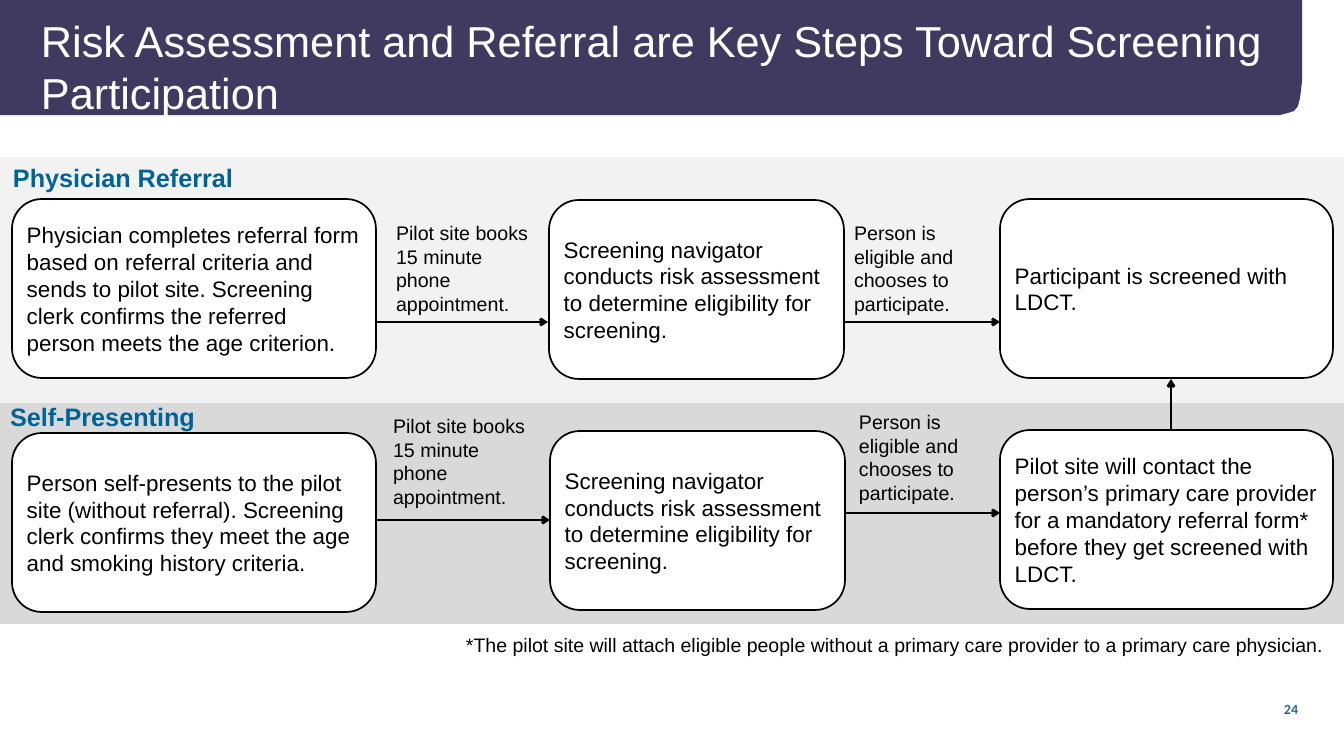
from lxml import etree
from pptx import Presentation, util as u
from pptx.dml.color import RGBColor
from pptx.enum import shapes, text
from pptx.oxml.ns import qn

PX = 14966  # EMU per px
PURPLE = RGBColor(0x40, 0x3A, 0x60)
BLUE = RGBColor(0x00, 0x62, 0x95)
PAGE_BLUE = RGBColor(0x32, 0x62, 0x95)
LIGHT_GREY = RGBColor(0xF2, 0xF2, 0xF2)
MID_GREY = RGBColor(0xD9, 0xD9, 0xD9)
WHITE = RGBColor(0xFF, 0xFF, 0xFF)
BLACK = RGBColor(0, 0, 0)

prs = Presentation()
prs.slide_width, prs.slide_height = 1344 * PX, 756 * PX
s = prs.slides.add_slide(prs.slide_layouts[6])


def add_text(content, x, y, w, h, size=23.1, color=BLACK, font="Arial", bold=False,
             wrap=True, inset=True, middle=False, boxed=False):
    """Add a text box, or a white rounded box with a black outline if boxed."""
    frame = [v * PX for v in (x, y, w, h)]
    if boxed:
        sp = s.shapes.add_shape(shapes.MSO_SHAPE.ROUNDED_RECTANGLE, *frame)
        sp.shadow.inherit = False
        sp.fill.solid()
        sp.fill.fore_color.rgb = WHITE
        sp.line.color.rgb = BLACK
        sp.line.width = u.Pt(2)
    else:
        sp = s.shapes.add_textbox(*frame)
    tf = sp.text_frame
    tf.word_wrap = wrap
    tf.vertical_anchor = text.MSO_ANCHOR.MIDDLE if middle or boxed else text.MSO_ANCHOR.TOP
    if not inset:
        tf.margin_left = tf.margin_top = tf.margin_right = tf.margin_bottom = 0
    p = tf.paragraphs[0]
    p.alignment = text.PP_ALIGN.LEFT
    r = p.add_run()
    r.text = content
    r.font.name, r.font.size, r.font.bold = font, u.Pt(size), bold
    r.font.color.rgb = color


# Title banner with a rounded lower right corner
builder = s.shapes.build_freeform(1302, 0, scale=PX)
builder.add_line_segments([(0, 0), (0, 115), (1268, 115), (1280, 115), (1288, 113), (1294, 111),
                           (1298, 106), (1300, 98), (1301, 91), (1302, 81)])
banner = builder.convert_to_shape()

# Background bands of the two pathways
referral_band, self_band = [
    s.shapes.add_shape(shapes.MSO_SHAPE.RECTANGLE, 0, y * PX, 1344 * PX, h * PX)
    for y, h in ((157, 246), (403, 221))]

for sp, color in ((banner, PURPLE), (referral_band, LIGHT_GREY), (self_band, MID_GREY)):
    sp.shadow.inherit = False
    sp.fill.solid()
    sp.fill.fore_color.rgb = color
    sp.line.fill.background()

add_text("Risk Assessment and Referral are Key Steps Toward Screening Participation",
         41, 40, 1261, 53, size=51, color=WHITE, inset=False, middle=True)
add_text("Physician Referral", 7, 159, 234, 37, size=29.7, color=BLUE, bold=True, wrap=False)
add_text("Self-Presenting", 4, 398, 199, 37, size=29.7, color=BLUE, bold=True, wrap=False)

# Arrows between the steps
for x1, y1, x2, y2 in ((376, 322, 548, 322), (845, 322, 1000, 322),
                       (376, 520, 550, 520), (845, 513, 1000, 513),
                       (1171, 431, 1171, 379)):
    arrow = s.shapes.add_connector(shapes.MSO_CONNECTOR.STRAIGHT,
                                   x1 * PX, y1 * PX, x2 * PX, y2 * PX)
    arrow.line.color.rgb = BLACK
    arrow.line.width = u.Pt(3)
    etree.SubElement(arrow.line._get_or_add_ln(), qn("a:tailEnd"), type="arrow")
    etree.SubElement(arrow._element.spPr, qn("a:effectLst"))

# Steps
ASSESSMENT = ("Screening navigator conducts risk assessment to determine eligibility "
              "for screening.")
for content, x, y, w in (
        ("Physician completes referral form based on referral criteria and sends to pilot site. "
         "Screening clerk confirms the referred person meets the age criterion.", 12, 199, 364),
        (ASSESSMENT, 549, 200, 295),
        ("Participant is screened with LDCT.", 1000, 199, 333),
        ("Person self-presents to the pilot site (without referral). Screening clerk confirms "
         "they meet the age and smoking history criteria.", 12, 433, 364),
        (ASSESSMENT, 550, 431, 295),
        ("Pilot site will contact the person’s primary care provider for a mandatory referral "
         "form* before they get screened with LDCT.", 1000, 430, 333)):
    add_text(content, x, y, w, 179, size=26.4, boxed=True)

# Labels above the arrows
BOOKING = "Pilot site books 15 minute phone appointment."
ELIGIBLE = "Person is eligible and chooses to participate."
for content, x, y, w in ((BOOKING, 390, 218, 153), (ELIGIBLE, 848, 218, 153),
                         (BOOKING, 387, 411, 153), (ELIGIBLE, 853, 407, 140)):
    add_text(content, x, y, w, 101)

add_text("*The pilot site will attach eligible people without a primary care provider "
         "to a primary care physician.", 460, 630, 884, 30, size=23)
add_text("24", 1284, 700, 19, 16, size=16.5, color=PAGE_BLUE, font="Calibri", bold=True,
         inset=False)

prs.save("out.pptx")
